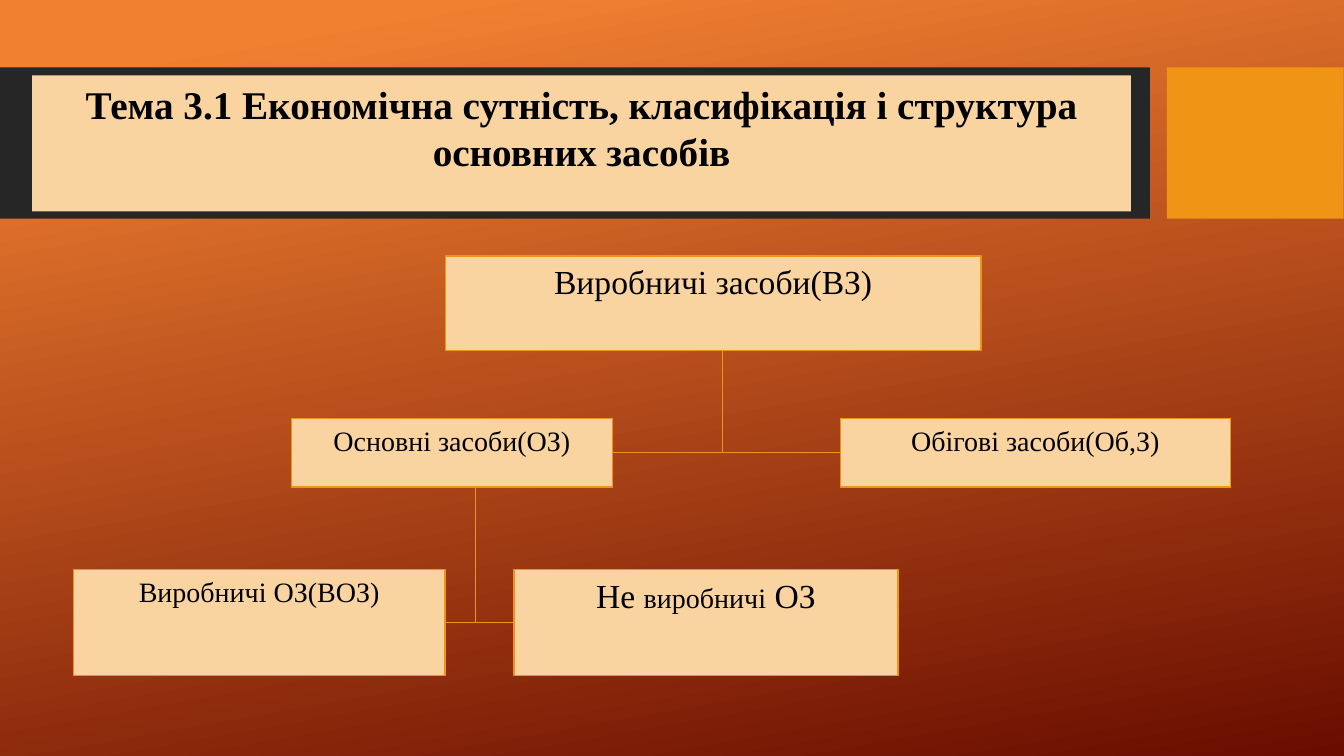
from dataclasses import dataclass

from lxml.etree import SubElement
from pptx import Presentation
from pptx.dml.color import RGBColor
from pptx.enum.shapes import MSO_CONNECTOR, MSO_SHAPE
from pptx.enum.text import MSO_ANCHOR, PP_ALIGN
from pptx.oxml.ns import qn
from pptx.util import Cm, Pt


@dataclass(frozen=True)
class Theme:
    font: str = "Times New Roman"
    title_size: int = 28
    large_size: int = 24
    small_size: int = 20
    text: RGBColor = RGBColor(0x00, 0x00, 0x00)
    panel: RGBColor = RGBColor(0xF9, 0xD4, 0xA1)
    accent: RGBColor = RGBColor(0xF0, 0x94, 0x15)
    band: RGBColor = RGBColor(0x26, 0x26, 0x26)
    glow: RGBColor = RGBColor(0xF1, 0x80, 0x31)
    ember: RGBColor = RGBColor(0x6A, 0x0D, 0x00)


THEME = Theme()


def write_run(paragraph, text, size, bold=False, color=THEME.text):
    run = paragraph.add_run()
    run.text = text
    run.font.name = THEME.font
    run.font.size = Pt(size)
    run.font.bold = bold
    run.font.color.rgb = color


def prepare_frame(frame):
    """Wrap text from the top and return the centred first paragraph."""
    frame.word_wrap = True
    frame.vertical_anchor = MSO_ANCHOR.TOP
    paragraph = frame.paragraphs[0]
    paragraph.alignment = PP_ALIGN.CENTER
    return paragraph


def paint_background(slide):
    fill = slide.background.fill
    fill.gradient()
    fill.gradient_angle = 280
    stops = ((0.08, THEME.glow), (1, THEME.ember))
    for stop, (position, color) in zip(fill.gradient_stops, stops):
        stop.position = position
        stop.color.rgb = color


def add_panel(slide, left, top, width, height, color, outline=None):
    panel = slide.shapes.add_shape(
        MSO_SHAPE.RECTANGLE, Cm(left), Cm(top), Cm(width), Cm(height))
    panel.shadow.inherit = False
    panel.fill.solid()
    panel.fill.fore_color.rgb = color
    if outline is None:
        panel.line.fill.background()
    else:
        panel.line.color.rgb = outline
        panel.line.width = Pt(1)
    return panel


def add_node(slide, left, top, width, height, *runs):
    node = add_panel(slide, left, top, width, height, THEME.panel, THEME.accent)
    paragraph = prepare_frame(node.text_frame)
    for text, size in runs:
        write_run(paragraph, text, size)
    return node


def add_link(slide, x1, y1, x2, y2):
    link = slide.shapes.add_connector(MSO_CONNECTOR.STRAIGHT, x1, y1, x2, y2)
    link.line.color.rgb = THEME.accent
    link.line.width = Pt(0.75)
    SubElement(link.element.spPr, qn("a:effectLst"))


def link_family(slide, parent, left_child, right_child, stem_x):
    """Join two children by a bar and hang the bar from the parent."""
    bar_y = left_child.top + left_child.height // 2
    add_link(slide, stem_x, parent.top + parent.height, stem_x, bar_y)
    add_link(slide, left_child.left + left_child.width, bar_y,
             right_child.left, bar_y)


def place_title(slide, text):
    title = slide.shapes.title
    title.left, title.top = Cm(0.81), Cm(1.9)
    title.width, title.height = Cm(27.69), Cm(3.43)
    title.fill.solid()
    title.fill.fore_color.rgb = THEME.panel
    write_run(prepare_frame(title.text_frame), text, THEME.title_size, bold=True)
    # Bring the title in front of the header band
    title.element.getparent().append(title.element)


def main():
    deck = Presentation()
    deck.slide_width, deck.slide_height = Cm(33.87), Cm(19.05)
    slide = deck.slides.add_slide(deck.slide_layouts[5])
    paint_background(slide)

    # Header
    add_panel(slide, 0, 1.7, 28.98, 3.81, THEME.band)
    add_panel(slide, 29.41, 1.7, 4.45, 3.81, THEME.accent)
    place_title(slide, "Тема 3.1 Економічна сутність, класифікація і "
                       "структура основних засобів")

    # Classification tree
    large, small = THEME.large_size, THEME.small_size
    production_means = add_node(slide, 11.23, 6.45, 13.49, 2.39,
                                ("Виробничі засоби(ВЗ)", large))
    fixed_assets = add_node(slide, 7.34, 10.54, 8.1, 1.73,
                            ("Основні засоби(ОЗ)", small))
    current_assets = add_node(slide, 21.18, 10.54, 9.83, 1.73,
                              ("Обігові засоби(Об,З)", small))
    productive = add_node(slide, 1.85, 14.35, 9.37, 2.67,
                          ("Виробничі ОЗ(ВОЗ)", small))
    non_productive = add_node(slide, 12.95, 14.35, 9.68, 2.67,
                              ("Не ", large), ("виробничі", small), (" ОЗ", large))

    # Branches
    link_family(slide, production_means, fixed_assets, current_assets, Cm(18.2))
    link_family(slide, fixed_assets, productive, non_productive, Cm(11.99))

    deck.save("out.pptx")


if __name__ == "__main__":
    main()
